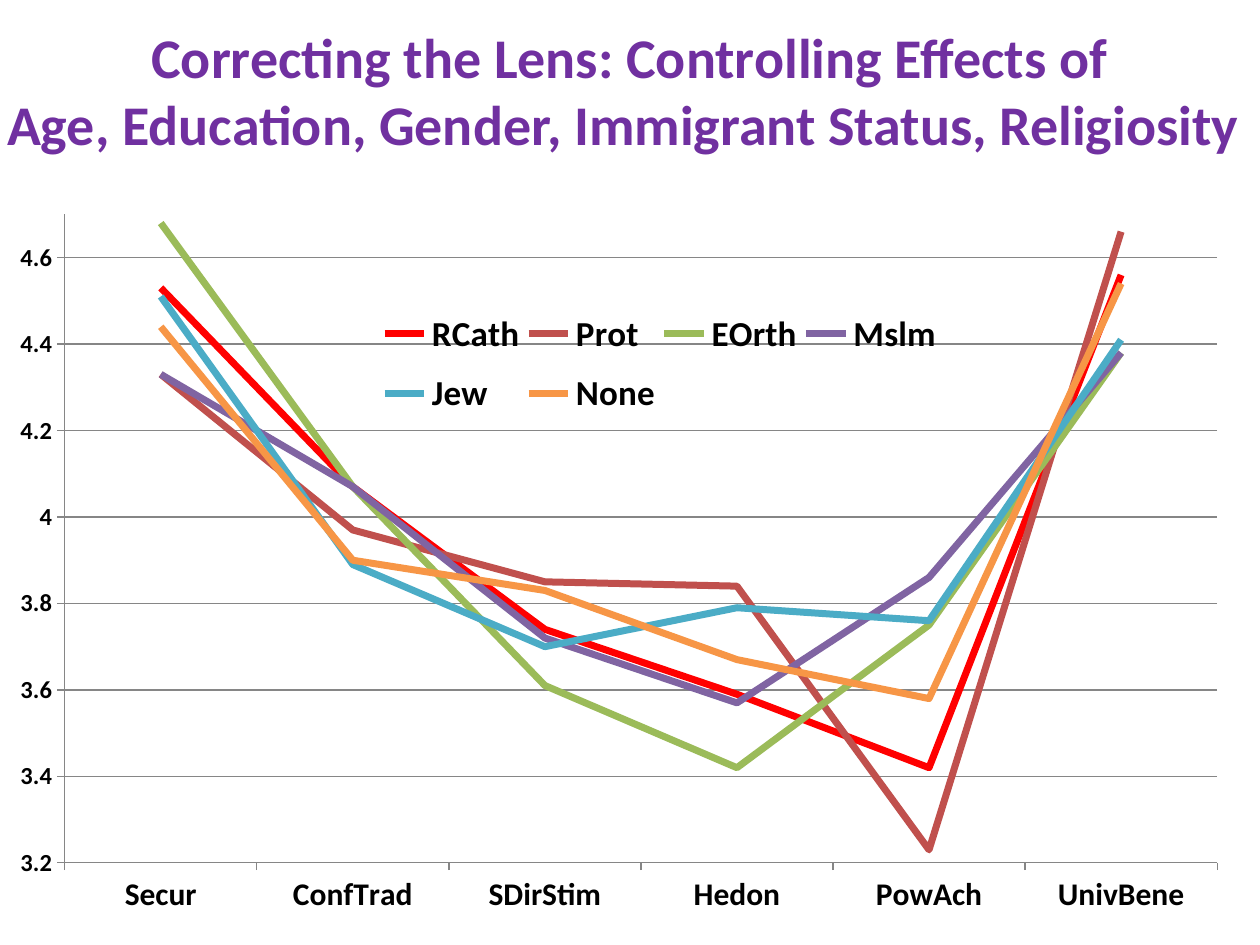
from lxml import etree
from pptx import Presentation
from pptx.chart.data import CategoryChartData
from pptx.dml.color import RGBColor
from pptx.enum import chart as kinds, text
from pptx.oxml.ns import qn
from pptx.util import Pt

PURPLE = RGBColor(0x70, 0x30, 0xA0)
BLACK = RGBColor(0, 0, 0)
GRAY = RGBColor(0x86, 0x86, 0x86)
FONT = "Calibri"

CATEGORIES = ["Secur", "ConfTrad", "SDirStim", "Hedon", "PowAch", "UnivBene"]
GROUPS = [
    ("RCath", RGBColor(0xFF, 0x00, 0x00), (4.53, 4.07, 3.74, 3.59, 3.42, 4.56)),
    ("Prot", RGBColor(0xC0, 0x50, 0x4D), (4.33, 3.97, 3.85, 3.84, 3.23, 4.66)),
    ("EOrth", RGBColor(0x9B, 0xBB, 0x59), (4.68, 4.07, 3.61, 3.42, 3.75, 4.38)),
    ("Mslm", RGBColor(0x80, 0x64, 0xA2), (4.33, 4.07, 3.72, 3.57, 3.86, 4.38)),
    ("Jew", RGBColor(0x4B, 0xAC, 0xC6), (4.51, 3.89, 3.7, 3.79, 3.76, 4.41)),
    ("None", RGBColor(0xF7, 0x96, 0x46), (4.44, 3.9, 3.83, 3.67, 3.58, 4.54)),
]


def style_font(font, size, color=BLACK, bold=True):
    for name, value in dict(name=FONT, size=Pt(size), bold=bold).items():
        setattr(font, name, value)
    font.color.rgb = color


def place(parent, index, inner, **fractions):
    """Give a chart part a manual layout in fractions of the chart."""
    for old in parent.findall(qn("c:layout")):
        parent.remove(old)
    layout = etree.Element(qn("c:layout"))
    manual = etree.SubElement(layout, qn("c:manualLayout"))
    settings = {"layoutTarget": "inner"} if inner else {}
    settings.update(xMode="edge", yMode="edge", **fractions)
    for tag, value in settings.items():
        etree.SubElement(manual, qn("c:" + tag)).set("val", str(value))
    parent.insert(index, layout)


deck = Presentation()
deck.slide_width, deck.slide_height = Pt(720), Pt(540)
page = deck.slides.add_slide(deck.slide_layouts[5])

# Title
title = page.shapes.title
for name, value in dict(left=0, top=6, width=720, height=90).items():
    setattr(title, name, Pt(value))
frame = title.text_frame
for name, value in dict(margin_left=0, margin_right=0, word_wrap=True,
                        auto_size=text.MSO_AUTO_SIZE.NONE,
                        vertical_anchor=text.MSO_ANCHOR.MIDDLE).items():
    setattr(frame, name, value)
para = frame.paragraphs[0]
para.text = ("Correcting the Lens: Controlling Effects of\v"
             "Age, Education, Gender, Immigrant Status, Religiosity ")
para.alignment = text.PP_ALIGN.CENTER
for span in para.runs:
    style_font(span.font, 32, PURPLE)

# Line chart of the value means by religious group
data = CategoryChartData(number_format="General")
data.categories = CATEGORIES
for name, color, means in GROUPS:
    data.add_series(name, means)
chart = page.shapes.add_chart(kinds.XL_CHART_TYPE.LINE, Pt(0), Pt(114),
                              Pt(740), Pt(426), data).chart
chart.has_title = False
style_font(chart.font, 10, bold=False)
plot = chart.plots[0]
plot.vary_by_categories = False
for series, (name, color, means) in zip(plot.series, GROUPS):
    series.smooth = False
    series.marker.style = kinds.XL_MARKER_STYLE.NONE
    series.format.line.color.rgb = color
    series.format.line.width = Pt(4)

# Axes
values = chart.value_axis
for name, value in dict(minimum_scale=3.2, maximum_scale=4.7, major_unit=0.2,
                        has_major_gridlines=True).items():
    setattr(values, name, value)
for axis, size in ((chart.category_axis, 18), (values, 14)):
    axis.major_tick_mark = kinds.XL_TICK_MARK.OUTSIDE
    axis.minor_tick_mark = kinds.XL_TICK_MARK.NONE
    style_font(axis.tick_labels.font, size)
for line in (chart.category_axis.format.line, values.format.line,
             values.major_gridlines.format.line):
    line.color.rgb = GRAY
    line.width = Pt(0.75)

# Legend inside the plot
chart.has_legend = True
legend = chart.legend
legend.position = kinds.XL_LEGEND_POSITION.RIGHT
legend.include_in_layout = False
style_font(legend.font, 20)
place(legend._element, 1, False, x=0.29, y=0.13, w=0.44, h=0.18)
place(plot._element.getparent(), 0, True, x=0.05, y=0.02, w=0.89, h=0.87)

deck.save("out.pptx")
